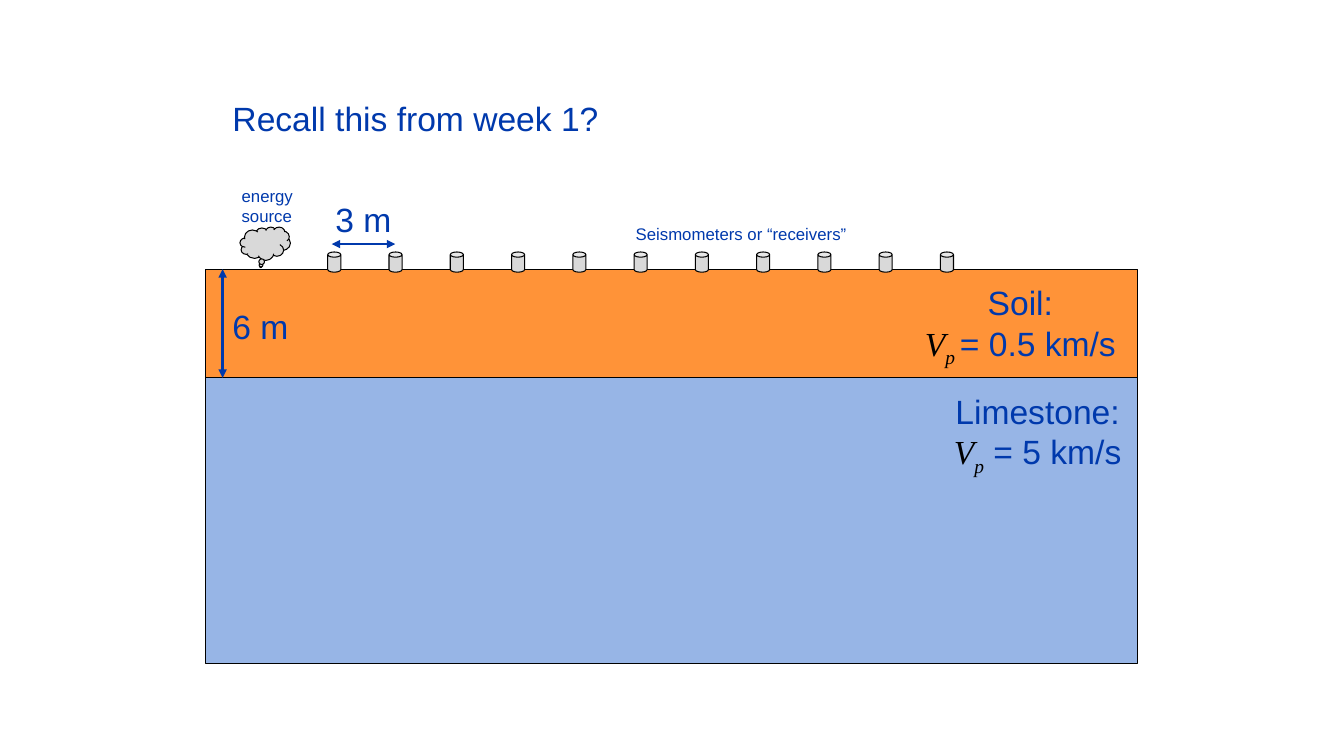
from dataclasses import dataclass

from lxml import etree
from pptx import Presentation
from pptx.dml.color import RGBColor as RGB
from pptx.enum.shapes import MSO_CONNECTOR, MSO_SHAPE
from pptx.enum.text import MSO_AUTO_SIZE, PP_ALIGN
from pptx.oxml.ns import qn
from pptx.util import Cm, Pt


@dataclass(frozen=True)
class Theme:
    blue: RGB = RGB(0x00, 0x39, 0xAC)
    black: RGB = RGB(0, 0, 0)
    soil: RGB = RGB(0xFF, 0x93, 0x38)
    limestone: RGB = RGB(0x97, 0xB5, 0xE6)
    grey: RGB = RGB(0xD9, 0xD9, 0xD9)
    large: Pt = Pt(24)
    small: Pt = Pt(12)
    outline: Pt = Pt(0.75)
    arrow: Pt = Pt(2)


theme = Theme()
PLAIN = {"name": "Arial", "italic": False}
SYMBOL = {"name": "Times New Roman", "italic": True}

prs = Presentation()
prs.slide_width, prs.slide_height = Cm(33.87), Cm(19.05)
s = prs.slides.add_slide(prs.slide_layouts[6])


def add_outlined(kind, box, fill, adjustments=()):
    sp = s.shapes.add_shape(kind, *map(Cm, box))
    sp.shadow.inherit = False
    sp.fill.solid()
    sp.fill.fore_color.rgb = fill
    sp.line.color.rgb = theme.black
    sp.line.width = theme.outline
    for i, value in enumerate(adjustments):
        sp.adjustments[i] = value


def add_label(box, paragraphs, size, align=PP_ALIGN.LEFT):
    """Each paragraph is a list of (text, font format, colour, baseline) runs."""
    tf = s.shapes.add_textbox(*map(Cm, box)).text_frame
    tf.word_wrap = False
    tf.auto_size = MSO_AUTO_SIZE.SHAPE_TO_FIT_TEXT
    for i, runs in enumerate(paragraphs):
        p = tf.add_paragraph() if i else tf.paragraphs[0]
        p.alignment = align
        for text, font_format, color, baseline in runs:
            r = p.add_run()
            r.text = text
            r.font.size = size
            r.font.color.rgb = color
            for name, value in font_format.items():
                setattr(r.font, name, value)
            if baseline:
                r.font._element.set("baseline", str(baseline))


# Ground layers, each with its wave speed
layers = [
    ((5.18, 6.78, 23.5, 2.74), theme.soil,
     (22.96, 6.99, 5.51, 2.31), "Soil:", "p ", "= 0.5 km/s"),
    ((5.18, 9.52, 23.5, 7.19), theme.limestone,
     (23.75, 9.73, 4.8, 2.31), "Limestone:", "p", " = 5 km/s"),
]
for box, fill, label_box, rock, subscript, speed in layers:
    add_outlined(MSO_SHAPE.RECTANGLE, box, fill)
    add_label(label_box, [
        [(rock, PLAIN, theme.blue, 0)],
        [("V", SYMBOL, theme.black, 0),
         (subscript, SYMBOL, theme.black, -25000),
         (speed, PLAIN, theme.blue, 0)],
    ], theme.large, PP_ALIGN.CENTER)

# Energy source and the row of seismometers
add_outlined(MSO_SHAPE.CLOUD_CALLOUT, (6.05, 5.72, 1.27, 0.84), theme.grey, (-0.09, 0.69))
first_left, last_left, count = 8.26, 23.7, 11
for i in range(count):
    left = first_left + i * (last_left - first_left) / (count - 1)
    add_outlined(MSO_SHAPE.CAN, (left, 6.35, 0.33, 0.51), theme.grey, (0.4,))

# Plain labels
labels = [
    ((5.61, 2.34, 9.83, 1.27), ["Recall this from week 1?"], theme.large),
    ((5.84, 4.55, 1.8, 1.27), ["energy", "source"], theme.small),
    ((15.77, 5.51, 6.02, 0.76), ["Seismometers or “receivers”"], theme.small),
    ((5.61, 7.59, 1.93, 1.27), ["6 m"], theme.large),
    ((8.2, 4.9, 1.93, 1.27), ["3 m"], theme.large),
]
for box, lines, size in labels:
    add_label(box, [[(line, PLAIN, theme.blue, 0)] for line in lines], size)

# Dimension arrows: layer depth and receiver spacing
for ends in [(5.61, 6.78, 5.61, 9.52), (8.36, 6.15, 9.96, 6.15)]:
    arrow = s.shapes.add_connector(MSO_CONNECTOR.STRAIGHT, *map(Cm, ends))
    arrow.line.color.rgb = theme.blue
    arrow.line.width = theme.arrow
    ln = arrow.line._get_or_add_ln()
    for end in ("a:headEnd", "a:tailEnd"):
        etree.SubElement(ln, qn(end), type="triangle")
    etree.SubElement(arrow._element.spPr, qn("a:effectLst"))

prs.save("out.pptx")
